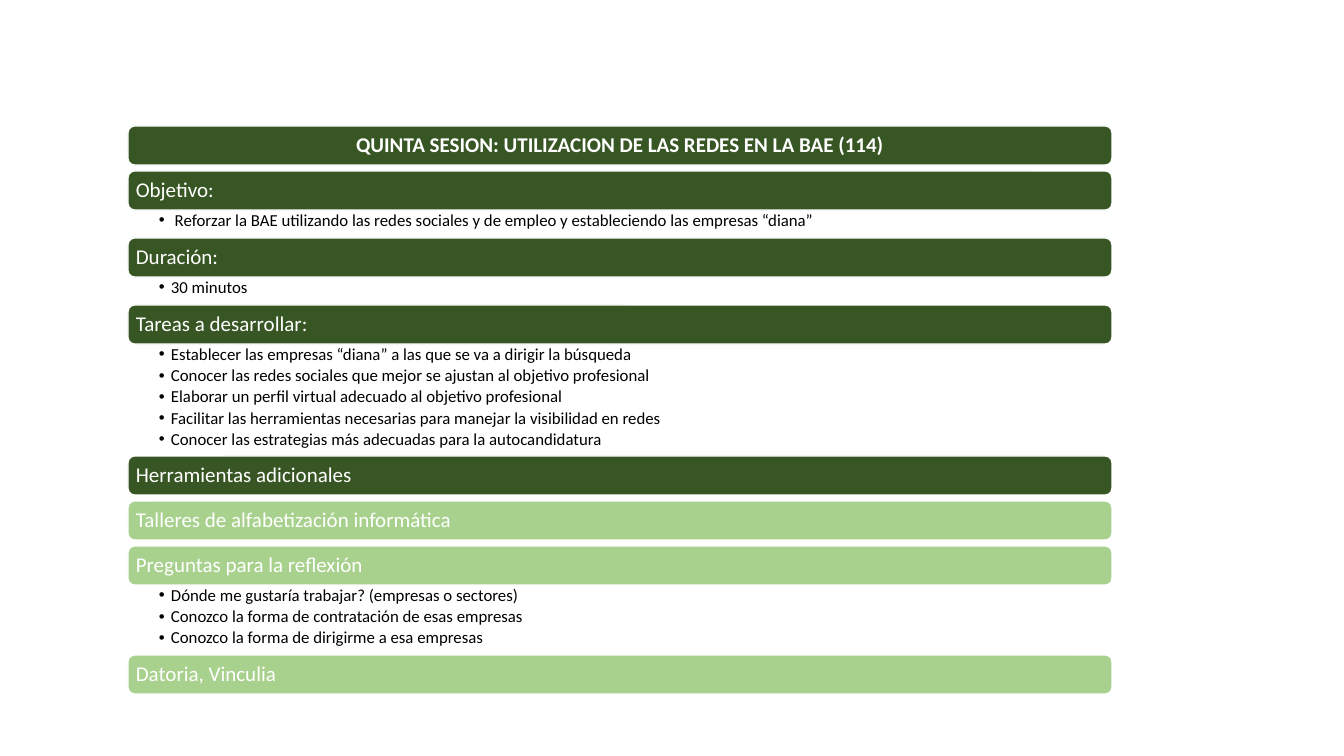
from lxml.etree import SubElement
from pptx import Presentation
from pptx.dml.color import RGBColor
from pptx.enum.shapes import MSO_SHAPE
from pptx.enum.text import MSO_ANCHOR, MSO_AUTO_SIZE, PP_ALIGN
from pptx.oxml.ns import qn
from pptx.util import Emu, Pt

SCALE = 12192000 / 1344
DARK = RGBColor(0x38, 0x56, 0x24)
LIGHT = RGBColor(0xA9, 0xD1, 0x8E)
WHITE = RGBColor(0xFF, 0xFF, 0xFF)
BLACK = RGBColor(0, 0, 0)

LEFT, TOP, WIDTH = 128, 126, 984
BAR_HEIGHT, BAR_GAP = 39, 6
ITEM_HEIGHT, LIST_PADDING = 21, 7

TITLE = "QUINTA SESION: UTILIZACION DE LAS REDES EN LA BAE (114)"
SECTIONS = [
    ("Objetivo:", DARK, [
        " Reforzar la BAE utilizando las redes sociales y de empleo y estableciendo las empresas “diana”",
    ]),
    ("Duración:", DARK, ["30 minutos"]),
    ("Tareas a desarrollar:", DARK, [
        "Establecer las empresas “diana” a las que se va a dirigir la búsqueda",
        "Conocer las redes sociales que mejor se ajustan al objetivo profesional",
        "Elaborar un perfil virtual adecuado al objetivo profesional",
        "Facilitar las herramientas necesarias para manejar la visibilidad en redes",
        "Conocer las estrategias más adecuadas para la autocandidatura",
    ]),
    ("Herramientas adicionales", DARK, []),
    ("Talleres de alfabetización informática", LIGHT, []),
    ("Preguntas para la reflexión", LIGHT, [
        "Dónde me gustaría trabajar? (empresas o sectores)",
        "Conozco la forma de contratación de esas empresas",
        "Conozco la forma de dirigirme a esa empresas",
    ]),
    ("Datoria, Vinculia", LIGHT, []),
]

BAR_FRAME = {"vertical_anchor": MSO_ANCHOR.MIDDLE, "margins": (6, 6, 6, 6)}
LIST_FRAME = {"vertical_anchor": MSO_ANCHOR.TOP, "margins": (31, 2, 12, 2)}
BAR_PARA = {"alignment": PP_ALIGN.LEFT, "line_spacing": 0.9, "space_before": Pt(0)}
TITLE_PARA = BAR_PARA | {"alignment": PP_ALIGN.CENTER}
LIST_PARA = BAR_PARA | {"level": 1, "space_after": Pt(2.2)}
BAR_FONT = {"name": "Calibri", "size": Pt(15), "bold": False}
TITLE_FONT = BAR_FONT | {"bold": True}
LIST_FONT = BAR_FONT | {"size": Pt(12)}


def px(length):
    """Turn pixels into EMU."""
    return Emu(round(length * SCALE))


def apply(target, values):
    """Set each named attribute on the target."""
    for name, value in values.items():
        setattr(target, name, value)


def place(shape, box):
    """Move a shape to the given pixel box."""
    apply(shape, dict(zip(("left", "top", "width", "height"), map(px, box))))


def add_bullet(para):
    """Give a paragraph a hanging round bullet."""
    properties = para._p.get_or_add_pPr()
    properties.set("marL", str(px(12)))
    properties.set("indent", str(-px(12)))
    SubElement(properties, qn("a:buFont"), typeface="Arial")
    SubElement(properties, qn("a:buChar"), char="•")


def write(shape, lines, frame_format, para_format, font_format, color, bulleted=False):
    """Fill a shape with formatted paragraphs."""
    frame = shape.text_frame
    apply(frame, {
        "word_wrap": True,
        "auto_size": MSO_AUTO_SIZE.NONE,
        "vertical_anchor": frame_format["vertical_anchor"],
    })
    sides = ("margin_left", "margin_top", "margin_right", "margin_bottom")
    apply(frame, dict(zip(sides, map(px, frame_format["margins"]))))
    for index, line in enumerate(lines):
        para = frame.add_paragraph() if index else frame.paragraphs[0]
        if bulleted:
            add_bullet(para)
        apply(para, para_format)
        span = para.add_run()
        span.text = line
        apply(span.font, font_format)
        span.font.color.rgb = color


def add_bar(page, box, color):
    """Draw one rounded bar in the given box."""
    bar = page.shapes.add_shape(MSO_SHAPE.ROUNDED_RECTANGLE, *map(px, box))
    bar.shadow.inherit = False
    bar.fill.solid()
    bar.fill.fore_color.rgb = color
    bar.line.color.rgb = WHITE
    bar.line.width = Pt(1)
    return bar


def add_title(page, box):
    """Set the slide title on a dark bar."""
    add_bar(page, box, DARK)
    title = page.shapes.title
    page.shapes.element.append(title.element)
    place(title, box)
    write(title, [TITLE], BAR_FRAME, TITLE_PARA, TITLE_FONT, WHITE)


def add_section(page, box, section, bodies):
    """Draw a heading bar with its list and return the next top."""
    heading, color, items = section
    left, top, width, height = box
    bar = add_bar(page, box, color)
    write(bar, [heading], BAR_FRAME, BAR_PARA, BAR_FONT, WHITE)
    bottom = top + height
    if not items:
        return bottom + BAR_GAP
    list_height = LIST_PADDING + ITEM_HEIGHT * len(items)
    body = next(bodies)
    place(body, (left, bottom, width, list_height))
    write(body, items, LIST_FRAME, LIST_PARA, LIST_FONT, BLACK, bulleted=True)
    return bottom + list_height


def build_session(deck):
    """Build the session slide from its title and sections."""
    page = deck.slides.add_slide(deck.slide_layouts.get_by_name("Comparison"))
    bodies = iter(list(page.placeholders)[1:])
    add_title(page, (LEFT, TOP, WIDTH, BAR_HEIGHT))
    top = TOP + BAR_HEIGHT + BAR_GAP
    for section in SECTIONS:
        top = add_section(page, (LEFT, top, WIDTH, BAR_HEIGHT), section, bodies)


def main():
    """Create and save the deck."""
    deck = Presentation()
    apply(deck, {"slide_width": px(1344), "slide_height": px(756)})
    build_session(deck)
    deck.save("out.pptx")


if __name__ == "__main__":
    main()
